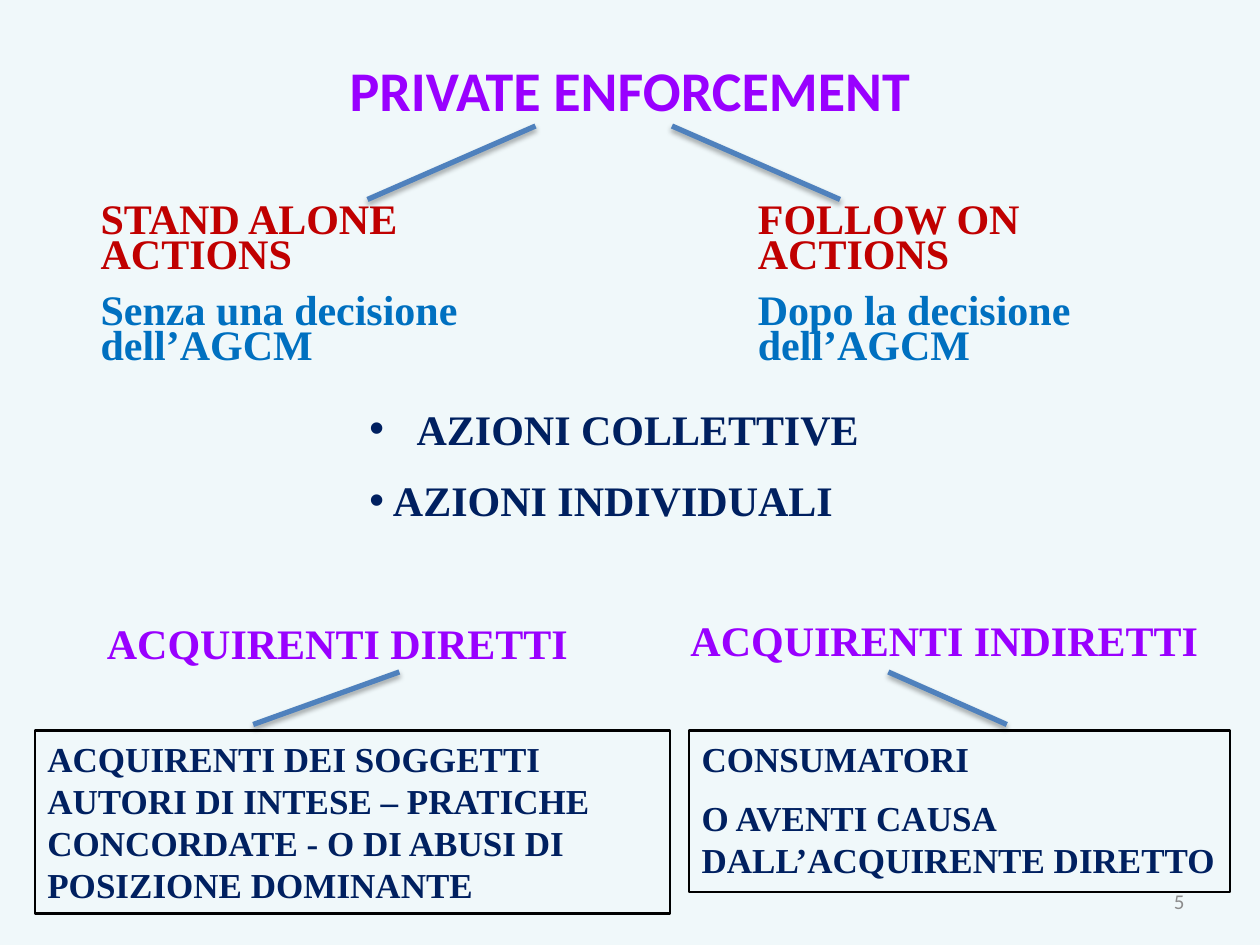
from lxml import etree
from pptx import Presentation, util as u
from pptx.dml.color import RGBColor
from pptx.enum import shapes, text
from pptx.oxml import parse_xml
from pptx.oxml.ns import nsdecls, qn

Pt = u.Pt
BACKGROUND = RGBColor(0xF0, 0xF8, 0xFA)
PURPLE = RGBColor(0x99, 0x00, 0xFF)
RED = RGBColor(0xC0, 0x00, 0x00)
BLUE = RGBColor(0x00, 0x70, 0xC0)
NAVY = RGBColor(0x00, 0x20, 0x60)
STEEL = RGBColor(0x4F, 0x81, 0xBD)
GREY = RGBColor(0x8C, 0x8C, 0x8C)
BLACK = RGBColor(0, 0, 0)
SERIF = "Times New Roman"
SANS = "Calibri"


def write(frame, words, first=False, size=24, color=NAVY, font=SERIF, bold=True,
          align=text.PP_ALIGN.LEFT, before=0, leading=None):
    paragraph = frame.paragraphs[0] if first else frame.add_paragraph()
    paragraph.alignment = align
    paragraph.space_before = Pt(before)
    if leading:
        paragraph.line_spacing = Pt(leading)
    run = paragraph.add_run()
    run.text = words
    run.font.size = Pt(size)
    run.font.name = font
    run.font.bold = bold
    run.font.color.rgb = color
    return paragraph


def add_frame(slide, box, wrap=True, grow=True):
    frame = slide.shapes.add_textbox(*map(Pt, box)).text_frame
    frame.word_wrap = wrap
    if grow:
        frame.auto_size = text.MSO_AUTO_SIZE.SHAPE_TO_FIT_TEXT
    return frame


def add_title(slide, box, words):
    title = slide.shapes.title
    title.left, title.top, title.width, title.height = map(Pt, box)
    title.text_frame.vertical_anchor = text.MSO_ANCHOR.MIDDLE
    write(title.text_frame, words, first=True, size=32, color=PURPLE, font=SANS,
          align=text.PP_ALIGN.CENTER)


def add_action(slide, box, name, condition):
    frame = add_frame(slide, box)
    write(frame, name, first=True, color=RED, leading=20)
    write(frame, condition, color=BLUE, before=12, leading=20)


def add_bullets(slide, box, entries):
    frame = add_frame(slide, box)
    for index, (words, hanging) in enumerate(entries):
        paragraph = write(frame, words, first=index == 0, before=12 if index else 0)
        properties = paragraph._p.get_or_add_pPr()
        properties.set("marL", str(Pt(hanging)))
        properties.set("indent", str(-Pt(hanging)))
        etree.SubElement(properties, qn("a:buFont")).set("typeface", "Arial")
        etree.SubElement(properties, qn("a:buChar")).set("char", "•")


def add_heading(slide, box, words, wrap=True):
    write(add_frame(slide, box, wrap=wrap), words, first=True, color=PURPLE)


def add_buyers(slide, box, lines):
    buyers = slide.shapes.add_shape(shapes.MSO_SHAPE.RECTANGLE, *map(Pt, box))
    buyers.shadow.inherit = False
    buyers.fill.background()
    buyers.line.color.rgb = BLACK
    buyers.line.width = Pt(1.5)
    frame = buyers.text_frame
    frame.word_wrap = True
    frame.auto_size = text.MSO_AUTO_SIZE.SHAPE_TO_FIT_TEXT
    frame.vertical_anchor = text.MSO_ANCHOR.TOP
    for index, (words, before) in enumerate(lines):
        write(frame, words, first=index == 0, size=20, before=before)


def add_branch(slide, start, end):
    branch = slide.shapes.add_connector(
        shapes.MSO_CONNECTOR.STRAIGHT, *map(Pt, start + end))
    branch.line.color.rgb = STEEL
    branch.line.width = Pt(3)
    branch._element.spPr.append(parse_xml(
        f'<a:effectLst {nsdecls("a")}>'
        f'<a:outerShdw blurRad="{Pt(3.1)}" dist="{Pt(1.8)}" dir="5400000" rotWithShape="0">'
        '<a:srgbClr val="000000"><a:alpha val="35000"/></a:srgbClr>'
        '</a:outerShdw></a:effectLst>'))


def add_page_number(slide, box, number):
    frame = add_frame(slide, box, grow=False)
    frame.vertical_anchor = text.MSO_ANCHOR.MIDDLE
    write(frame, number, first=True, size=12, color=GREY, font=SANS, bold=False,
          align=text.PP_ALIGN.RIGHT)


def main():
    deck = Presentation()
    deck.slide_width, deck.slide_height = Pt(720), Pt(540)
    slide = deck.slides.add_slide(deck.slide_layouts[5])
    slide.background.fill.solid()
    slide.background.fill.fore_color.rgb = BACKGROUND

    add_title(slide, (54, 6, 612, 90), "PRIVATE ENFORCEMENT")
    add_action(slide, (50.4, 115.2, 281.5, 103),
               "STAND ALONE ACTIONS", "Senza una decisione dell’AGCM")
    add_action(slide, (426, 115.2, 198, 103),
               "FOLLOW ON ACTIONS", "Dopo la decisione dell’AGCM")
    add_bullets(slide, (204, 226.8, 344, 80),
                [("AZIONI COLLETTIVE", 27), ("AZIONI INDIVIDUALI", 13.5)])
    add_heading(slide, (387.5, 347.8, 324, 36), "ACQUIRENTI INDIRETTI")
    add_heading(slide, (54, 349.2, 281, 58), "ACQUIRENTI DIRETTI", wrap=False)
    add_buyers(slide, (20, 417.6, 363, 104.4), [
        ("ACQUIRENTI DEI SOGGETTI", 0),
        ("AUTORI DI INTESE – PRATICHE CONCORDATE - O DI ABUSI DI "
         "POSIZIONE DOMINANTE", 0)])
    add_buyers(slide, (393.8, 417.6, 309, 92.2), [
        ("CONSUMATORI", 0),
        ("O AVENTI CAUSA DALL’ACQUIRENTE DIRETTO", 10)])
    for start, end in [((306, 72), (210, 114)), ((384, 72), (480, 114)),
                       ((228.2, 384), (144.7, 414)), ((507.6, 384), (575.3, 414))]:
        add_branch(slide, start, end)
    add_page_number(slide, (516, 500.4, 168, 28.8), "5")
    deck.save("out.pptx")


if __name__ == "__main__":
    main()
